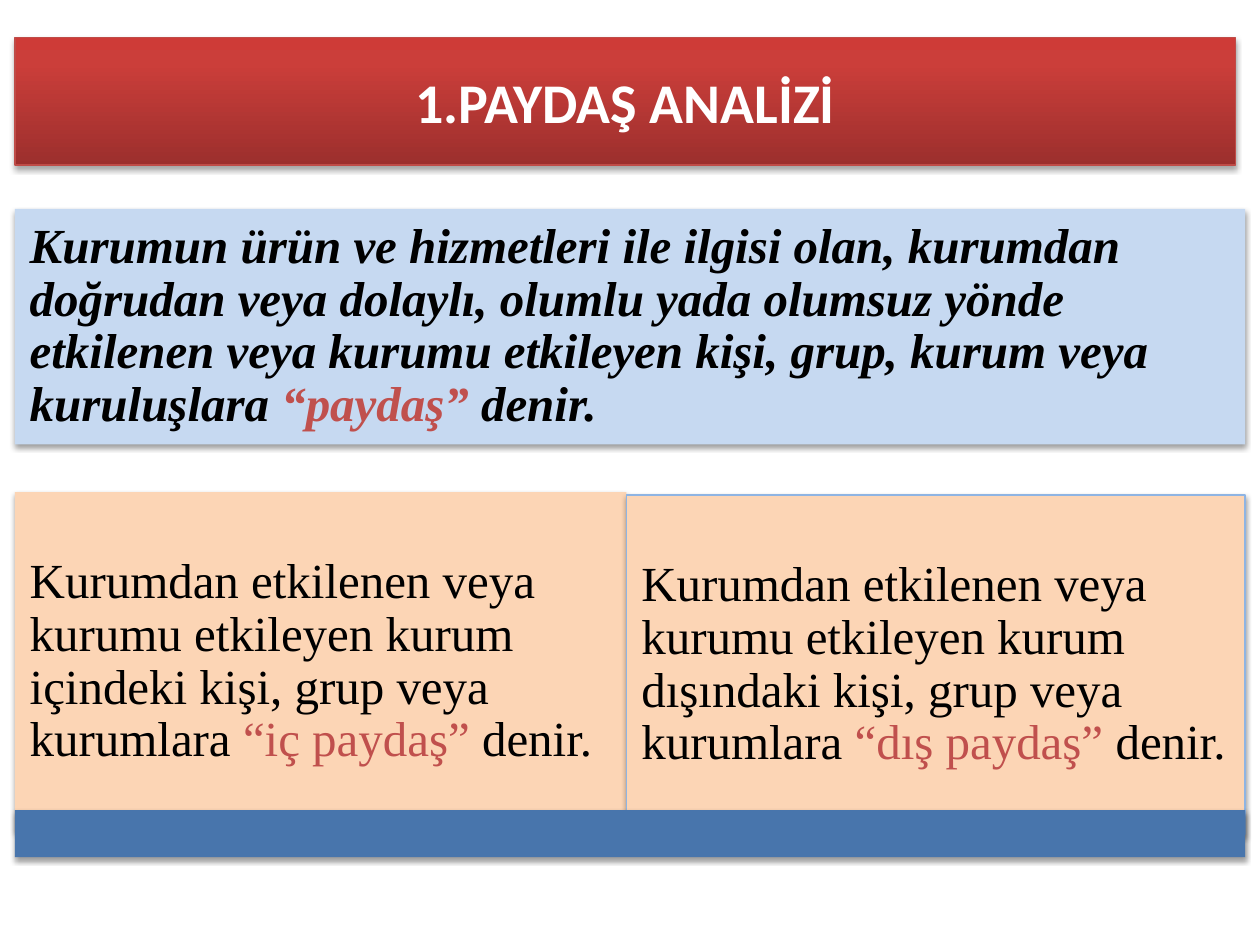
from copy import deepcopy
from pptx import Presentation
from pptx.dml.color import RGBColor as RGB
from pptx.enum.shapes import MSO_SHAPE as SHAPE
from pptx.enum.text import MSO_ANCHOR as ANCHOR, PP_ALIGN as ALIGN
from pptx.oxml import parse_xml
from pptx.oxml.ns import nsdecls, qn
from pptx.util import Cm, Pt

BLACK = RGB(0x00, 0x00, 0x00)
WHITE = RGB(0xFF, 0xFF, 0xFF)
ACCENT = RGB(0xC0, 0x50, 0x4D)
BLUE = RGB(0xC6, 0xD9, 0xF1)
PEACH = RGB(0xFC, 0xD5, 0xB5)
STEEL = RGB(0x48, 0x75, 0xAC)
SKY = RGB(0x8E, 0xB4, 0xE3)
EDGE = RGB(0xBF, 0x4C, 0x48)
REDS = [(0, RGB(0x9C, 0x2F, 0x2D)), (0.8, RGB(0xCB, 0x3E, 0x3A)),
        (1, RGB(0xCE, 0x3B, 0x37))]

# Content: text before the term, term, text after it
TITLE = "1.PAYDAŞ ANALİZİ"
MAIN = ("Kurumun ürün ve hizmetleri ile ilgisi olan, kurumdan doğrudan veya "
        "dolaylı, olumlu yada olumsuz yönde etkilenen veya kurumu etkileyen "
        "kişi, grup, kurum veya kuruluşlara ", "“paydaş” ", "denir.")
INNER, OUTER = [
    (f"Kurumdan etkilenen veya kurumu etkileyen kurum {place} kişi, grup "
     "veya kurumlara ", f"“{term} paydaş” ", "denir.")
    for place, term in (("içindeki", "iç"), ("dışındaki", "dış"))]

# Layout in cm
LEFT, WIDTH, HALF = 0.3, 24.8, 12.33
PAD = 0.3
# left, top, width, height, fill, line, text, bold italic
BOXES = [
    (LEFT, 4.21, WIDTH, 4.75, BLUE, None, MAIN, True),
    (LEFT, 9.92, HALF, 6.84, PEACH, None, INNER, False),
    (LEFT + HALF, 9.98, WIDTH - HALF, 6.84, PEACH, SKY, OUTER, False),
    (LEFT, 16.33, WIDTH, 0.95, STEEL, None, None, False),
]


def shade(shape, dist, alpha):
    """Give the shape a soft shadow straight below it."""
    shape.shadow.inherit = False
    shape._element.spPr.find(qn("a:effectLst")).append(parse_xml(
        f'<a:outerShdw {nsdecls("a")} blurRad="{Pt(3.1)}" dist="{Pt(dist)}" '
        f'dir="5400000" rotWithShape="0"><a:srgbClr val="000000">'
        f'<a:alpha val="{alpha * 1000}"/></a:srgbClr></a:outerShdw>'))


def edge(shape, color):
    if color is None:
        shape.line.fill.background()
    else:
        shape.line.color.rgb = color
        shape.line.width = Pt(0.75)


def style(run, size, name, color, bold, italic=False):
    font = run.font
    font.size, font.name = Pt(size), name
    font.bold, font.italic = bold, italic
    font.color.rgb = color


def add_box(slide, left, top, width, height, fill, line, parts, strong):
    box = slide.shapes.add_shape(
        SHAPE.RECTANGLE, Cm(left), Cm(top), Cm(width), Cm(height))
    box.fill.solid()
    box.fill.fore_color.rgb = fill
    edge(box, line)
    shade(box, 1.6, 38)
    if parts is None:
        return
    frame = box.text_frame
    frame.word_wrap = True
    frame.vertical_anchor = ANCHOR.MIDDLE
    frame.margin_left = frame.margin_right = Cm(PAD)
    frame.margin_top = frame.margin_bottom = Cm(PAD)
    para = frame.paragraphs[0]
    para.alignment = ALIGN.LEFT
    para.line_spacing = 0.9
    for text, color in zip(parts, (BLACK, ACCENT, BLACK)):
        run = para.add_run()
        run.text = text
        style(run, 28, "Times New Roman", color, strong, strong)


def add_title(slide):
    title = slide.shapes.title
    title.left, title.top = Cm(LEFT), Cm(0.76)
    title.width, title.height = Cm(24.61), Cm(2.57)
    # Red gradient, dark at the bottom
    title.fill.gradient()
    title.fill.gradient_angle = 90
    stops = title._element.spPr.find(".//" + qn("a:gsLst"))
    stops.append(deepcopy(stops[0]))
    for stop, (pos, color) in zip(title.fill.gradient_stops, REDS):
        stop.position = pos
        stop.color.rgb = color
    edge(title, EDGE)
    shade(title, 1.8, 35)
    frame = title.text_frame
    frame.text = TITLE
    frame.vertical_anchor = ANCHOR.MIDDLE
    para = frame.paragraphs[0]
    para.alignment = ALIGN.CENTER
    style(para.runs[0], 32, "Calibri", WHITE, True)


def main():
    prs = Presentation()
    prs.slide_width, prs.slide_height = Cm(25.4), Cm(19.05)
    slide = prs.slides.add_slide(prs.slide_layouts[5])
    add_title(slide)
    for box in BOXES:
        add_box(slide, *box)
    prs.save("out.pptx")


if __name__ == "__main__":
    main()
